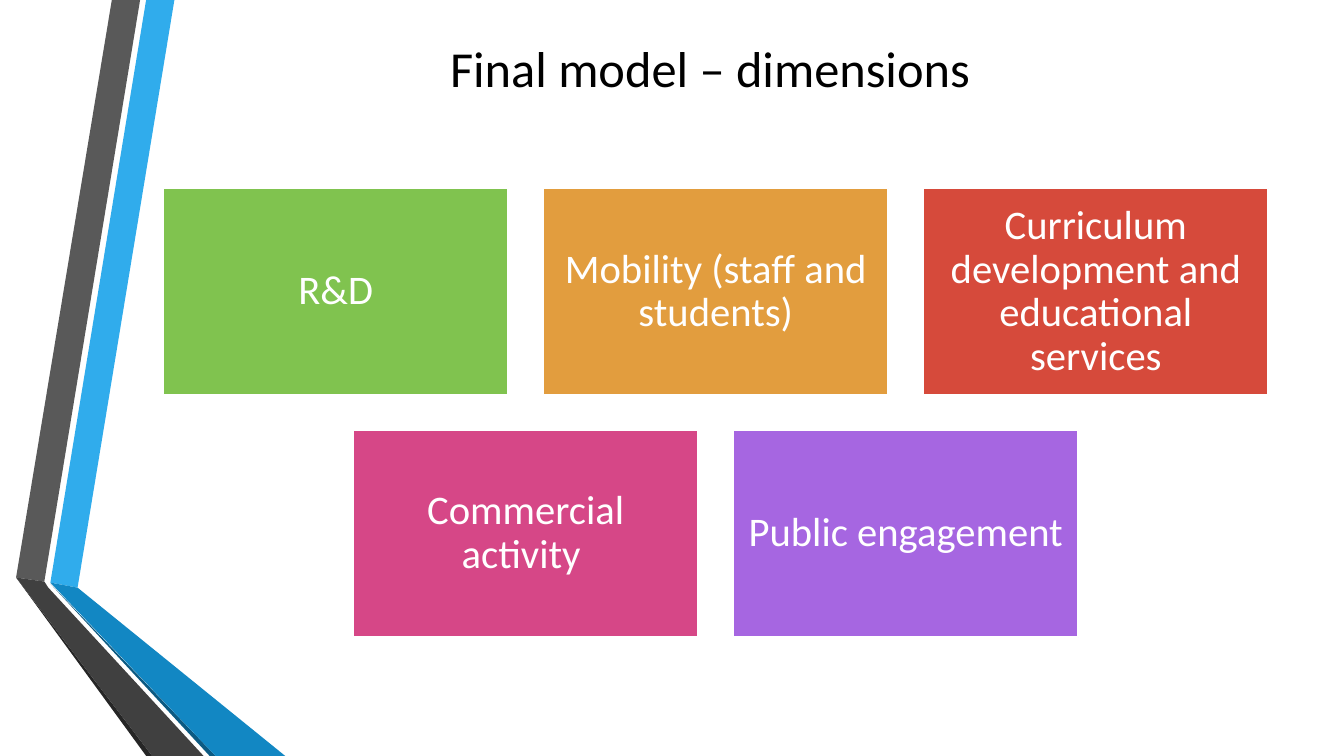
"""Build the slide showing the five dimensions of the final model."""
from dataclasses import dataclass

from pptx import Presentation
from pptx.dml.color import RGBColor
from pptx.enum.shapes import MSO_SHAPE
from pptx.enum.text import MSO_ANCHOR, PP_ALIGN
from pptx.util import Inches, Pt

RECTANGLE = MSO_SHAPE.RECTANGLE
MIDDLE = MSO_ANCHOR.MIDDLE
CENTER = PP_ALIGN.CENTER

FONT = "Calibri"
COLORS = {
    "white": "FFFFFF",
    "black": "000000",
    "sky": "30ACEC",
    "blue": "1287C3",
    "navy": "0C5A82",
    "grey": "595959",
    "charcoal": "404040",
    "soot": "262626",
    "green": "80C34F",
    "orange": "E29D3E",
    "red": "D64A3B",
    "pink": "D64787",
    "purple": "A666E1",
}

CONTENT_LEFT, CONTENT_WIDTH = 1.62, 10.96
CARD_WIDTH, CARD_HEIGHT, CARD_GAP = 3.42, 2.05, 0.35
CARDS_TOP = 1.87


@dataclass
class Ribbon:
    color: str
    points: list[tuple[float, float]]


@dataclass
class Card:
    text: str
    color: str


RIBBONS = [
    Ribbon("sky", [(0.5, 5.78), (0.77, 5.83), (1.73, 0), (1.45, 0)]),
    Ribbon("grey", [(1.39, 0), (1.11, 0), (0.16, 5.73), (0.44, 5.77)]),
    Ribbon("soot", [(0.16, 5.73), (1.45, 7.5), (1.51, 7.5)]),
    Ribbon("navy", [(0.5, 5.79), (2.08, 7.5), (2.14, 7.5)]),
    Ribbon("blue", [(0.5, 5.78), (2.14, 7.5), (2.83, 7.5), (0.77, 5.83)]),
    Ribbon("charcoal", [(2.02, 7.5), (0.48, 5.83), (0.44, 5.77), (0.16, 5.73), (1.51, 7.5)]),
]
CARD_ROWS = [
    [
        Card("R&D", "green"),
        Card("Mobility (staff and students)", "orange"),
        Card("Curriculum development and educational services", "red"),
    ],
    [Card("Commercial activity ", "pink"), Card("Public engagement ", "purple")],
]


def rgb(name: str) -> RGBColor:
    return RGBColor.from_string(COLORS[name])


def paint(shape, color: str) -> None:
    shape.shadow.inherit = False
    shape.fill.solid()
    shape.fill.fore_color.rgb = rgb(color)


def write(shape, text: str, size: float, color: str, spacing: float) -> None:
    frame = shape.text_frame
    frame.word_wrap = True
    frame.vertical_anchor = MIDDLE
    paragraph = frame.paragraphs[0]
    paragraph.alignment = CENTER
    paragraph.line_spacing = spacing
    run = paragraph.add_run()
    run.text = text
    run.font.name = FONT
    run.font.size = Pt(size)
    run.font.color.rgb = rgb(color)


def draw_ribbon(slide, ribbon: Ribbon) -> None:
    start, *others = [(Inches(x), Inches(y)) for x, y in ribbon.points]
    builder = slide.shapes.build_freeform(*start)
    builder.add_line_segments(others, close=True)
    shape = builder.convert_to_shape()
    paint(shape, ribbon.color)
    shape.line.fill.background()


def draw_card(slide, card: Card, left: float, top: float) -> None:
    shape = slide.shapes.add_shape(
        RECTANGLE, Inches(left), Inches(top), Inches(CARD_WIDTH), Inches(CARD_HEIGHT)
    )
    paint(shape, card.color)
    shape.line.color.rgb = rgb("white")
    shape.line.width = Pt(1.25)
    frame = shape.text_frame
    frame.margin_left = frame.margin_right = Inches(0.12)
    frame.margin_top = frame.margin_bottom = Inches(0.12)
    write(shape, card.text, 29, "white", 0.9)


def draw_card_row(slide, cards: list[Card], top: float) -> None:
    pitch = CARD_WIDTH + CARD_GAP
    row_width = len(cards) * pitch - CARD_GAP
    row_left = CONTENT_LEFT + (CONTENT_WIDTH - row_width) / 2
    for column, card in enumerate(cards):
        draw_card(slide, card, row_left + column * pitch, top)


def main() -> None:
    presentation = Presentation()
    presentation.slide_width = Inches(13.33)
    presentation.slide_height = Inches(7.5)
    slide = presentation.slides.add_slide(presentation.slide_layouts[6])

    for ribbon in RIBBONS:
        draw_ribbon(slide, ribbon)

    title = slide.shapes.add_textbox(
        Inches(CONTENT_LEFT), Inches(0.33), Inches(CONTENT_WIDTH), Inches(0.67)
    )
    write(title, "Final model – dimensions ", 36, "black", 1.0)

    for row, cards in enumerate(CARD_ROWS):
        draw_card_row(slide, cards, CARDS_TOP + row * (CARD_HEIGHT + CARD_GAP))

    presentation.save("out.pptx")


if __name__ == "__main__":
    main()
